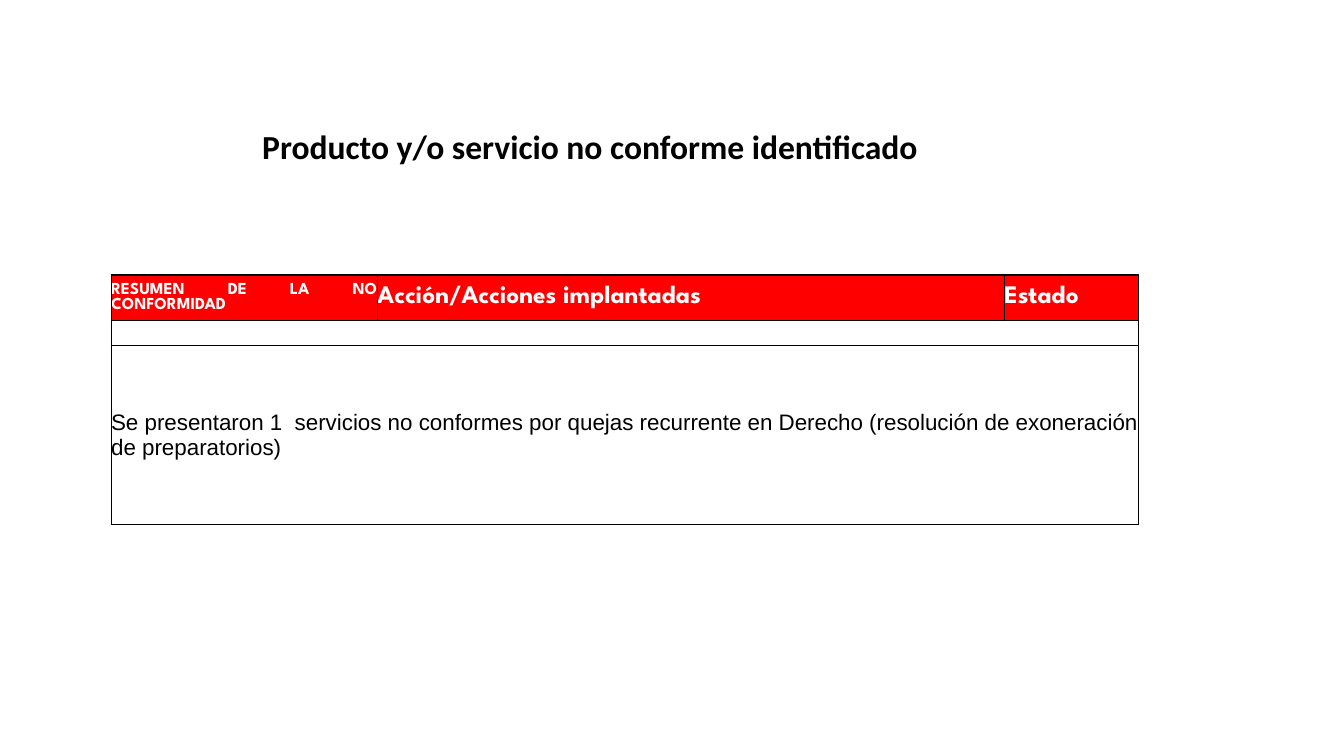
from dataclasses import dataclass

from lxml import etree
from pptx import Presentation
from pptx import util as u
from pptx.dml.color import RGBColor
from pptx.enum import text
from pptx.oxml import ns


@dataclass
class CellSpec:
    row: int
    col: int
    words: str
    size: int
    font: str = "League Spartan"
    color: str = "FFFFFF"
    bold: bool = True
    align: text.PP_ALIGN = text.PP_ALIGN.JUSTIFY
    fill: str = "FF0000"


COLUMN_WIDTHS = (6.71, 15.8, 3.38)
ROW_HEIGHTS = (1.15, 0.63, 4.5)
BODY = dict(font="Arial", color="000000", bold=False,
            align=text.PP_ALIGN.LEFT, fill="")
CELLS = [
    CellSpec(0, 0, "RESUMEN DE LA NO CONFORMIDAD", 12),
    CellSpec(0, 1, "Acción/Acciones implantadas", 18),
    CellSpec(0, 2, "Estado", 18),
    CellSpec(1, 0, "", 12, **BODY),
    CellSpec(2, 0, "Se presentaron 1  servicios no conformes por quejas recurrente en "
             "Derecho (resolución de exoneración de preparatorios)", 16, **BODY),
]


def rgb(value: str) -> RGBColor:
    return RGBColor.from_string(value)


def set_font(p, name: str, size: int, color: str, bold: bool) -> None:
    p.font.name = name
    p.font.size = u.Pt(size)
    p.font.bold = bold
    p.font.color.rgb = rgb(color)


def add_borders(cell, color: str, width: float) -> None:
    tc_pr = cell._tc.get_or_add_tcPr()
    for i, side in enumerate(("lnL", "lnR", "lnT", "lnB")):
        ln = etree.Element(ns.qn(f"a:{side}"), w=str(u.Pt(width)))
        solid = etree.SubElement(ln, ns.qn("a:solidFill"))
        etree.SubElement(solid, ns.qn("a:srgbClr"), val=color)
        tc_pr.insert(i, ln)


def fill_cell(cell, item: CellSpec) -> None:
    if item.fill:
        cell.fill.solid()
        cell.fill.fore_color.rgb = rgb(item.fill)
    p = cell.text_frame.paragraphs[0]
    p.text = item.words
    p.alignment = item.align
    set_font(p, item.font, item.size, item.color, item.bold)


def add_title(s) -> None:
    sp = s.shapes.title
    sp.left, sp.top, sp.width, sp.height = map(u.Cm, (1.27, 1.14, 27.2, 3.18))
    tf = sp.text_frame
    tf.word_wrap = True
    tf.auto_size = text.MSO_AUTO_SIZE.NONE
    tf.vertical_anchor = text.MSO_ANCHOR.BOTTOM
    p = tf.paragraphs[0]
    p.text = "Producto y/o servicio no conforme identificado"
    p.alignment = text.PP_ALIGN.CENTER
    p.line_spacing = 0.9
    set_font(p, "Calibri", 24, "000000", True)


def add_summary_table(s) -> None:
    table = s.shapes.add_table(
        len(ROW_HEIGHTS), len(COLUMN_WIDTHS), u.Cm(2.8), u.Cm(6.93),
        u.Cm(sum(COLUMN_WIDTHS)), u.Cm(sum(ROW_HEIGHTS))).table
    table.first_row = False
    table.horz_banding = False
    for column, width in zip(table.columns, COLUMN_WIDTHS):
        column.width = u.Cm(width)
    for row, height in zip(table.rows, ROW_HEIGHTS):
        row.height = u.Cm(height)
    for cell in table.iter_cells():
        cell.margin_left = cell.margin_right = 0
        cell.margin_top = cell.margin_bottom = 0
        cell.vertical_anchor = text.MSO_ANCHOR.MIDDLE
        cell.fill.background()
        add_borders(cell, "000000", 1)
    for row in (1, 2):
        table.cell(row, 0).merge(table.cell(row, 2))
    for item in CELLS:
        fill_cell(table.cell(item.row, item.col), item)


def main() -> None:
    prs = Presentation()
    prs.slide_width, prs.slide_height = u.Cm(33.87), u.Cm(19.05)
    s = prs.slides.add_slide(prs.slide_layouts[5])
    add_title(s)
    add_summary_table(s)
    prs.save("out.pptx")


if __name__ == "__main__":
    main()
